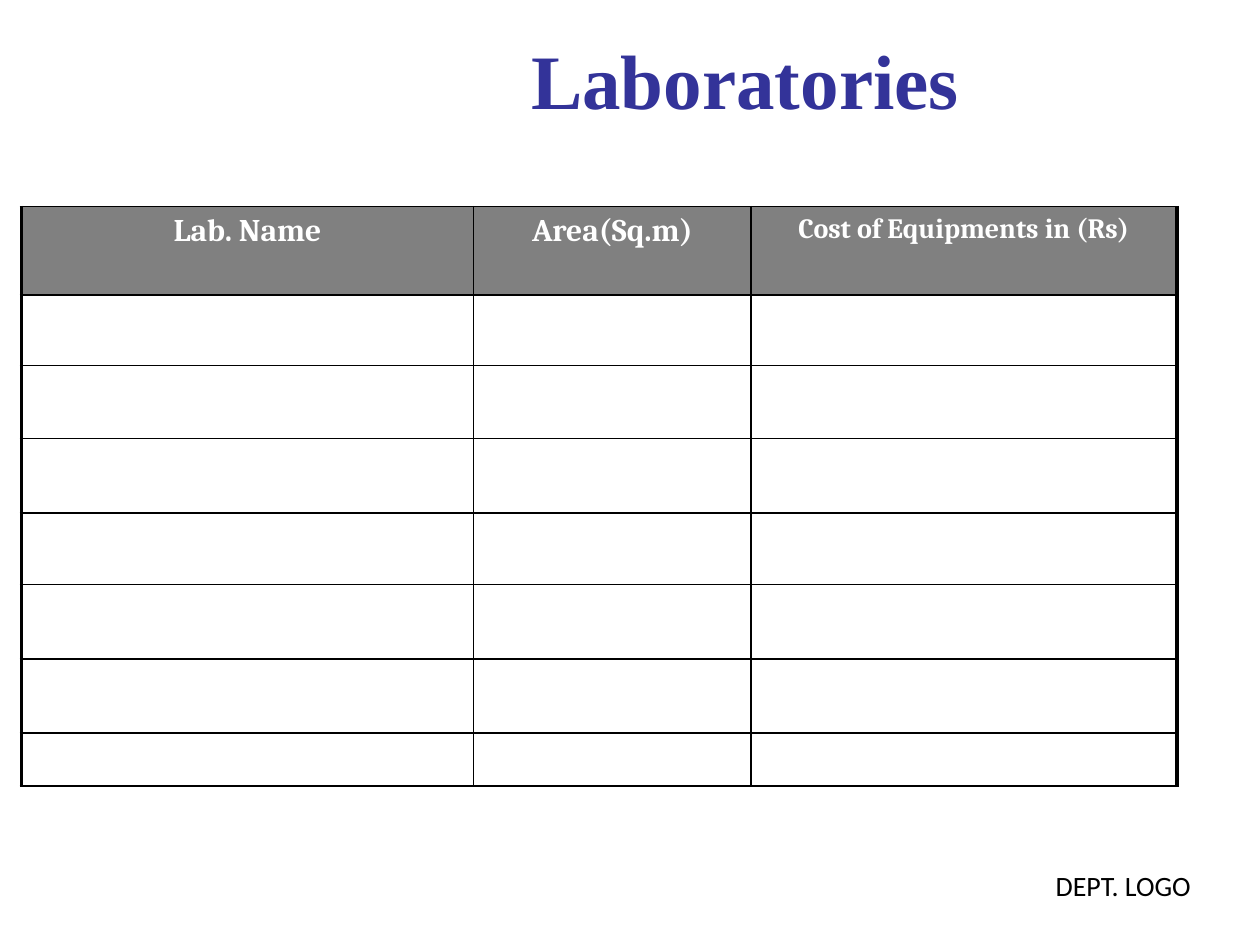
from lxml.etree import SubElement
from pptx import Presentation
from pptx.dml.color import RGBColor
from pptx.enum.shapes import MSO_SHAPE as Shape
from pptx.enum.text import MSO_ANCHOR as Anchor, PP_ALIGN as Align
from pptx.oxml.ns import qn
from pptx.util import Inches, Pt

COLORS = {"title": "333399", "header": "808080", "paper": "FFFFFF", "ink": "000000"}
TITLE = "Laboratories"
DEPARTMENT = "DEPT. LOGO"
COLUMNS = [("Lab. Name", 18, 3.59), ("Area(Sq.m)", 18, 2.2), ("Cost of Equipments in (Rs)", 16, 3.38)]
ROW_HEIGHTS = [0.7, 0.56, 0.58, 0.59, 0.57, 0.59, 0.59, 0.42]
WIDTH, HEIGHT = 10, 7.5
TABLE_LEFT, TABLE_TOP = 0.17, 1.64
THIN, THICK = 1, 2.25


def color(key):
    return RGBColor.from_string(COLORS[key])


def paint(owner, key):
    owner.fill.solid()
    owner.fill.fore_color.rgb = color(key)


def write(frame, text, size, face, key, bold=False):
    frame.word_wrap = True
    line = frame.paragraphs[0]
    line.text = text
    line.alignment = Align.CENTER
    line.font.size = Pt(size)
    line.font.name = face
    line.font.bold = bold
    line.font.color.rgb = color(key)
    return line


def add_borders(cell, widths):
    properties = cell._tc.get_or_add_tcPr()
    for side, points in widths.items():
        border = SubElement(properties, qn(f"a:ln{side}"), w=str(Pt(points)))
        fill = SubElement(border, qn("a:solidFill"))
        SubElement(fill, qn("a:srgbClr"), val=COLORS["ink"])


def add_labs_table(slide):
    widths = [width for _, _, width in COLUMNS]
    labs = slide.shapes.add_table(
        len(ROW_HEIGHTS), len(COLUMNS), Inches(TABLE_LEFT), Inches(TABLE_TOP),
        Inches(sum(widths)), Inches(sum(ROW_HEIGHTS))).table
    for column, width in zip(labs.columns, widths):
        column.width = Inches(width)
    last = len(COLUMNS) - 1
    for r, height in enumerate(ROW_HEIGHTS):
        labs.rows[r].height = Inches(height)
        for c, (heading, size, _) in enumerate(COLUMNS):
            cell = labs.cell(r, c)
            add_borders(cell, {"L": THICK if c == 0 else THIN,
                               "R": THICK if c == last else THIN,
                               "T": THIN, "B": THIN})
            paint(cell, "paper" if r else "header")
            if r == 0:
                line = write(cell.text_frame, heading, size, "Cambria", "paper", True)
                line.space_before = Pt(size * 0.2)


def main():
    deck = Presentation()
    deck.slide_width, deck.slide_height = Inches(WIDTH), Inches(HEIGHT)
    slide = deck.slides.add_slide(deck.slide_layouts[6])

    badge_width, badge_height = 2.17, 0.95
    badge = slide.shapes.add_shape(
        Shape.RECTANGLE, Inches(WIDTH - badge_width), Inches(HEIGHT - badge_height),
        Inches(badge_width), Inches(badge_height))
    badge.shadow.inherit = False
    paint(badge, "paper")
    badge.line.fill.background()
    badge.text_frame.vertical_anchor = Anchor.MIDDLE
    write(badge.text_frame, DEPARTMENT, 16, "Calibri", "ink")

    title_left = 1.83
    title = slide.shapes.add_textbox(
        Inches(title_left), 0, Inches(WIDTH - title_left), Inches(HEIGHT / 6))
    title.text_frame.vertical_anchor = Anchor.MIDDLE
    write(title.text_frame, TITLE, 44, "Times New Roman", "title", True)

    add_labs_table(slide)
    deck.save("out.pptx")


if __name__ == "__main__":
    main()
